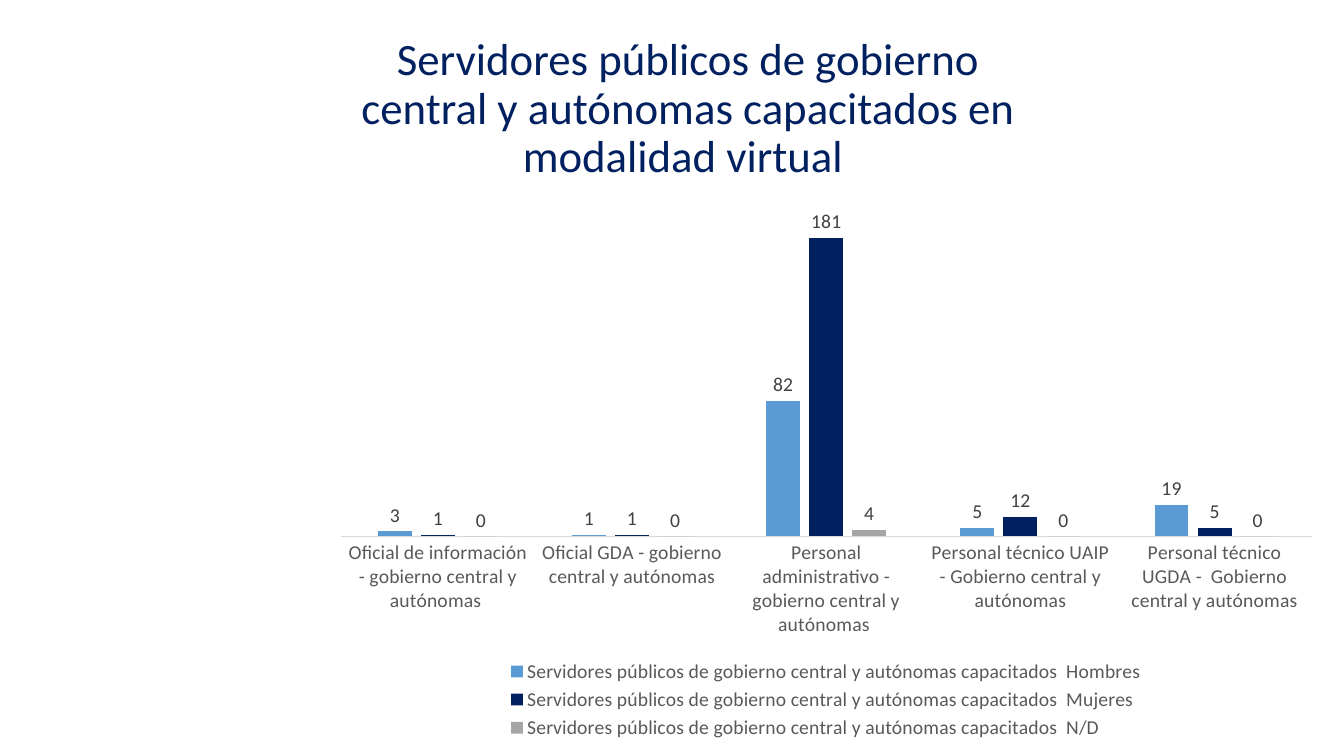
from pptx import Presentation
from pptx.chart.data import CategoryChartData
from pptx.dml.color import RGBColor
from pptx.enum.chart import XL_CHART_TYPE as ChartType
from pptx.enum.chart import XL_LABEL_POSITION as LabelPosition
from pptx.enum.chart import XL_LEGEND_POSITION as LegendPosition
from pptx.enum.chart import XL_TICK_MARK as TickMark
from pptx.enum.text import MSO_ANCHOR as Anchor
from pptx.enum.text import PP_ALIGN as Align
from pptx.oxml.ns import qn
from pptx.util import Inches, Pt

NAVY = RGBColor(0x00, 0x20, 0x60)
BLUE = RGBColor(0x5B, 0x9B, 0xD5)
GRAY = RGBColor(0xA5, 0xA5, 0xA5)
AXIS_TEXT = RGBColor(0x59, 0x59, 0x59)
LABEL_TEXT = RGBColor(0x40, 0x40, 0x40)
AXIS_LINE = RGBColor(0xD9, 0xD9, 0xD9)

TITLE = ("Servidores públicos de gobierno central y autónomas "
         "capacitados en modalidad virtual ")
SERIES_PREFIX = "Servidores públicos de gobierno central y autónomas capacitados  "
CATEGORIES = [
    "Oficial de información - gobierno central y autónomas ",
    "Oficial GDA - gobierno central y autónomas",
    "Personal administrativo - gobierno central y autónomas ",
    "Personal técnico UAIP - Gobierno central y autónomas",
    "Personal técnico UGDA -  Gobierno central y autónomas",
]
SERIES = [
    ("Hombres", BLUE, (3, 1, 82, 5, 19)),
    ("Mujeres", NAVY, (1, 1, 181, 12, 5)),
    ("N/D", GRAY, (None, None, 4, None, None)),
]


class SlideBuilder:
    font_name = "Calibri"
    title_size = Pt(32)
    chart_size = Pt(14)

    def __init__(self, page):
        self.page = page

    def style_font(self, font, size, color):
        font.name = self.font_name
        font.size = size
        font.bold = False
        font.color.rgb = color

    def title(self, text, left, top, width, height):
        box = self.page.shapes.title
        box.left, box.top = Inches(left), Inches(top)
        box.width, box.height = Inches(width), Inches(height)
        frame = box.text_frame
        frame.text = text
        frame.word_wrap = True
        frame.vertical_anchor = Anchor.MIDDLE
        para = frame.paragraphs[0]
        para.alignment = Align.CENTER
        para.line_spacing = 0.9
        self.style_font(para.runs[0].font, self.title_size, NAVY)

    def column_chart(self, left, top, width, height):
        data = CategoryChartData()
        data.categories = CATEGORIES
        for group, _, values in SERIES:
            data.add_series(SERIES_PREFIX + group, values)
        chart = self.page.shapes.add_chart(
            ChartType.COLUMN_CLUSTERED, Inches(left), Inches(top),
            Inches(width), Inches(height), data).chart
        for blanks in chart.element.iter(qn("c:dispBlanksAs")):
            blanks.set("val", "zero")
        self.style_font(chart.font, self.chart_size, AXIS_TEXT)
        chart.has_title = False
        self.axes(chart)
        self.columns(chart.plots[0])
        chart.has_legend = True
        chart.legend.position = LegendPosition.BOTTOM
        chart.legend.include_in_layout = False
        self.style_font(chart.legend.font, self.chart_size, AXIS_TEXT)

    def axes(self, chart):
        category_axis = chart.category_axis
        category_axis.major_tick_mark = TickMark.NONE
        category_axis.format.line.color.rgb = AXIS_LINE
        category_axis.format.line.width = Pt(0.75)
        self.style_font(category_axis.tick_labels.font, self.chart_size, AXIS_TEXT)
        value_axis = chart.value_axis
        value_axis.visible = False
        value_axis.has_major_gridlines = False
        value_axis.minimum_scale = 0
        value_axis.maximum_scale = 200

    def columns(self, plot):
        plot.gap_width = 219
        plot.overlap = -27
        plot.vary_by_categories = False
        for series, (_, color, _) in zip(plot.series, SERIES):
            series.format.fill.solid()
            series.format.fill.fore_color.rgb = color
            series.invert_if_negative = False
            labels = series.data_labels
            labels.show_value = True
            labels.position = LabelPosition.OUTSIDE_END
            self.style_font(labels.font, self.chart_size, LABEL_TEXT)


def main():
    deck = Presentation()
    deck.slide_width, deck.slide_height = Inches(13.33), Inches(7.5)
    page = deck.slides.add_slide(deck.slide_layouts[5])
    builder = SlideBuilder(page)
    builder.title(TITLE, 3.18, 0.23, 7.29, 1.72)
    builder.column_chart(3.18, 1.94, 10.03, 5.44)
    deck.save("out.pptx")


if __name__ == "__main__":
    main()
